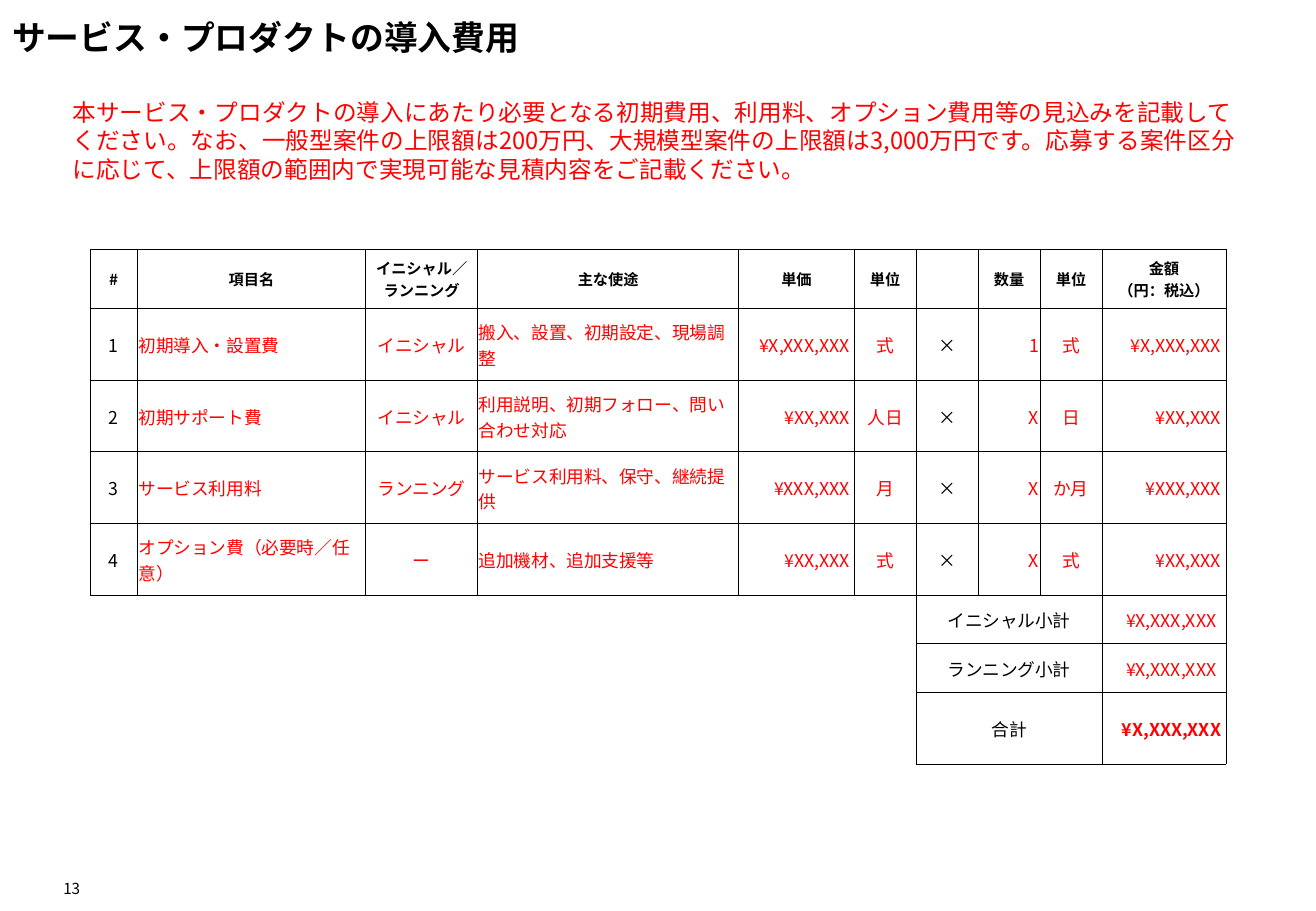
from lxml import etree
from pptx import Presentation
from pptx.dml.color import RGBColor
from pptx.enum import text
from pptx.oxml.ns import qn
from pptx.util import Inches, Pt

FONT = "Noto Sans CJK JP"
COLORS = {"ink": "000000", "sample": "FF0000", "paper": "FFFFFF"}
LEFT, CENTER, RIGHT = text.PP_ALIGN.LEFT, text.PP_ALIGN.CENTER, text.PP_ALIGN.RIGHT

TITLE = "サービス・プロダクトの導入費用"
GUIDANCE = (
    "本サービス・プロダクトの導入にあたり必要となる初期費用、利用料、オプション費用等の見込みを記載してください。"
    "なお、一般型案件の上限額は200万円、大規模型案件の上限額は3,000万円です。"
    "応募する案件区分に応じて、上限額の範囲内で実現可能な見積内容をご記載ください。"
)
PAGE_NUMBER = "13"
HEADINGS = ["#", "項目名", "イニシャル／\nランニング", "主な使途", "単価", "単位", "",
            "数量", "単位", "金額\v（円：税込）"]
ITEMS = [
    ("初期導入・設置費", "イニシャル", "搬入、設置、初期設定、現場調整", "¥X,XXX,XXX", "式", "1", "式"),
    ("初期サポート費", "イニシャル", "利用説明、初期フォロー、問い合わせ対応", "¥XX,XXX", "人日", "X", "日"),
    ("サービス利用料", "ランニング", "サービス利用料、保守、継続提供", "¥XXX,XXX", "月", "X", "か月"),
    ("オプション費（必要時／任意）", "ー", "追加機材、追加支援等", "¥XX,XXX", "式", "X", "式"),
]
TOTALS = [
    ("イニシャル小計", "¥X,XXX,XXX", 0.08, False),
    ("ランニング小計", "¥X,XXX,XXX", 0.08, False),
    ("合計", "¥X,XXX,XXX", 0.04, True),
]
COLUMN_WIDTHS = [0.39, 1.88, 0.92, 2.15, 0.95, 0.51, 0.51, 0.51, 0.51, 1.02]
ROW_HEIGHTS = [0.49] + [0.59] * len(ITEMS) + [0.4, 0.4, 0.59]
COLUMN_ALIGNS = [CENTER, LEFT, CENTER, LEFT, RIGHT, CENTER, CENTER, RIGHT, CENTER, RIGHT]
PRICE_COLUMNS = (4, 9)
FIXED_COLUMNS = (0, 6)
TOTAL_LABEL, TOTAL_AMOUNT = 6, 9
FIRST_TOTAL = len(ITEMS) + 1


def write(frame, wording, size, color="ink", bold=False, align=LEFT):
    frame.text = wording
    for paragraph in frame.paragraphs:
        paragraph.alignment = align
        font = paragraph.font
        font.size, font.bold, font.name = Pt(size), bold, FONT
        font.color.rgb = RGBColor.from_string(COLORS[color])
        defaults = paragraph._p.pPr.find(qn("a:defRPr"))
        etree.SubElement(defaults, qn("a:ea")).set("typeface", FONT)


def place(shape, left, top, width, height):
    shape.left, shape.top = Inches(left), Inches(top)
    shape.width, shape.height = Inches(width), Inches(height)


def set_borders(cell, visible):
    properties = cell._tc.get_or_add_tcPr()
    for position, side in enumerate("LRTB"):
        line = etree.Element(qn(f"a:ln{side}"), w=str(Pt(0.5)))
        if side in visible:
            fill = etree.SubElement(line, qn("a:solidFill"))
            etree.SubElement(fill, qn("a:srgbClr")).set("val", COLORS["ink"])
        else:
            etree.SubElement(line, qn("a:noFill"))
        properties.insert(position, line)


def fill_cell(cell, wording, size, color="ink", bold=False, align=CENTER, right=0.01):
    cell.margin_left = cell.margin_top = Inches(0.01)
    cell.margin_right, cell.margin_bottom = Inches(right), 0
    cell.vertical_anchor = text.MSO_ANCHOR.MIDDLE
    write(cell.text_frame, wording, size, color, bold, align)


def visible_sides(row, column):
    if row < FIRST_TOTAL or column >= TOTAL_LABEL:
        return "LRTB"
    top = "T" if row == FIRST_TOTAL else ""
    return top + ("R" if column == TOTAL_LABEL - 1 else "")


def build_costs(slide):
    costs = slide.shapes.add_table(
        len(ROW_HEIGHTS), len(COLUMN_WIDTHS), Inches(0.74), Inches(2.05),
        Inches(sum(COLUMN_WIDTHS)), Inches(sum(ROW_HEIGHTS))).table
    costs.first_row = costs.horz_banding = False
    for column, width in zip(costs.columns, COLUMN_WIDTHS):
        column.width = Inches(width)
    for r, height in enumerate(ROW_HEIGHTS):
        costs.rows[r].height = Inches(height)
        for c in range(len(COLUMN_WIDTHS)):
            cell = costs.cell(r, c)
            cell.fill.solid()
            cell.fill.fore_color.rgb = RGBColor.from_string(COLORS["paper"])
            set_borders(cell, visible_sides(r, c))

    for c, heading in enumerate(HEADINGS):
        fill_cell(costs.cell(0, c), heading, 9, bold=True)
    for r, (name, phase, purpose, price, unit, quantity, quantity_unit) in enumerate(ITEMS, 1):
        entries = [str(r), name, phase, purpose, price, unit, "×", quantity, quantity_unit, price]
        for c, entry in enumerate(entries):
            fill_cell(costs.cell(r, c), entry, 10.5,
                      "ink" if c in FIXED_COLUMNS else "sample",
                      align=COLUMN_ALIGNS[c], right=0.04 if c in PRICE_COLUMNS else 0.01)
    for r, (label, amount, right, bold) in enumerate(TOTALS, FIRST_TOTAL):
        label_cell = costs.cell(r, TOTAL_LABEL)
        label_cell.merge(costs.cell(r, TOTAL_AMOUNT - 1))
        fill_cell(label_cell, label, 10.5)
        fill_cell(costs.cell(r, TOTAL_AMOUNT), amount, 10.5, "sample", bold, RIGHT, right)


def main():
    deck = Presentation()
    deck.slide_width, deck.slide_height = Inches(10.83), Inches(7.5)
    slide = deck.slides.add_slide(deck.slide_layouts[5])

    title = slide.shapes.title
    place(title, 0, 0, 9.34, 0.61)
    title.text_frame.vertical_anchor = text.MSO_ANCHOR.MIDDLE
    write(title.text_frame, TITLE, 20, bold=True)

    guidance = slide.shapes.add_textbox(Inches(0.5), Inches(0.75), Inches(9.84), Inches(0.41))
    guidance.text_frame.word_wrap = True
    write(guidance.text_frame, GUIDANCE, 14, "sample")
    guidance.text_frame.paragraphs[0].line_spacing = Pt(17)

    build_costs(slide)

    page = slide.shapes.add_textbox(Inches(0.46), Inches(7.2), Inches(0.2), Inches(0.19))
    frame = page.text_frame
    frame.margin_left = frame.margin_right = frame.margin_top = frame.margin_bottom = 0
    frame.word_wrap = False
    frame.vertical_anchor = text.MSO_ANCHOR.BOTTOM
    write(frame, PAGE_NUMBER, 9, align=RIGHT)

    deck.save("out.pptx")


if __name__ == "__main__":
    main()
